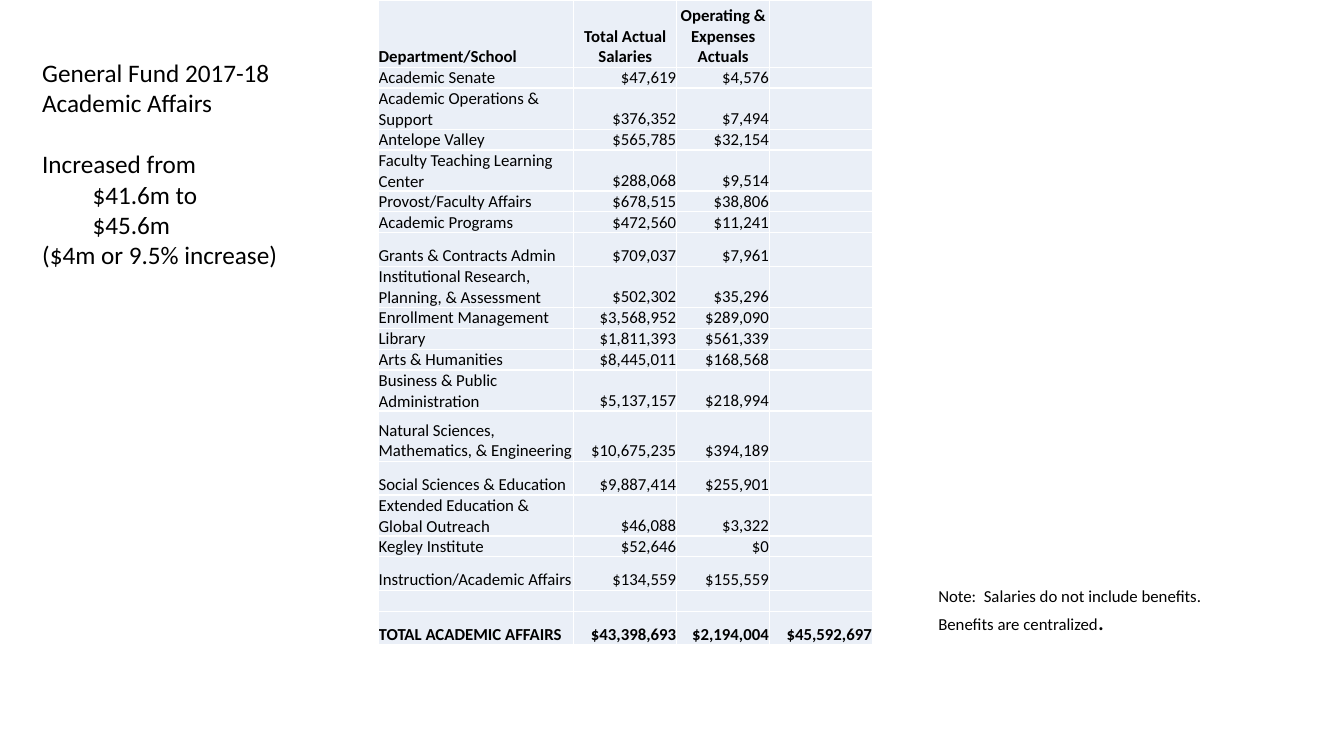
from lxml.etree import SubElement
from pptx import Presentation
from pptx.dml.color import RGBColor
from pptx.enum.text import MSO_ANCHOR, MSO_AUTO_SIZE, PP_ALIGN
from pptx.oxml.ns import qn
from pptx.util import Pt

COLORS = {"ink": "000000", "cell": "EAEFF7", "border": "FFFFFF"}
FONT = "Calibri"


def style_font(font, size, bold=False):
    font.name = FONT
    font.size = Pt(size)
    font.bold = bold
    font.color.rgb = RGBColor.from_string(COLORS["ink"])


def add_border(cell_properties, side):
    line = SubElement(cell_properties, qn(f"a:{side}"), w=str(Pt(1)))
    fill = SubElement(line, qn("a:solidFill"))
    SubElement(fill, qn("a:srgbClr"), val=COLORS["border"])


prs = Presentation()
prs.slide_width = Pt(960)
prs.slide_height = Pt(540)
slide = prs.slides.add_slide(prs.slide_layouts[6])

note = slide.shapes.add_textbox(Pt(663.12), Pt(414.72), Pt(296.64), Pt(43.92)).text_frame
note.word_wrap = True
note.auto_size = MSO_AUTO_SIZE.SHAPE_TO_FIT_TEXT
note.text = "Note:  Salaries do not include benefits.\nBenefits are centralized"
note.paragraphs[1].add_run().text = "."
for paragraph in note.paragraphs:
    for run in paragraph.runs:
        style_font(run.font, 18 if run.text == "." else 12)

summary = slide.shapes.add_textbox(Pt(23.04), Pt(37.44), Pt(184.32), Pt(159.84)).text_frame
summary.word_wrap = False
summary.auto_size = MSO_AUTO_SIZE.SHAPE_TO_FIT_TEXT
summary.text = "\n".join([
    "General Fund 2017-18",
    "Academic Affairs",
    "Increased from",
    "$41.6m to",
    "$45.6m",
    "($4m or 9.5% increase)",
])
for paragraph in summary.paragraphs:
    style_font(paragraph.runs[0].font, 18)
summary.paragraphs[2].space_before = Pt(22)
for amount in summary.paragraphs[3:5]:
    amount.level = 1
    amount._p.get_or_add_pPr().set("marL", str(Pt(36)))

budget_rows = [
    (4, "Department/School", "Total Actual Salaries", "Operating & Expenses Actuals", ""),
    (1, "Academic Senate", "$47,619", "$4,576", ""),
    (2, "Academic Operations & Support", "$376,352", "$7,494", ""),
    (1, "Antelope Valley", "$565,785", "$32,154", ""),
    (2, "Faculty Teaching Learning Center", "$288,068", "$9,514", ""),
    (1, "Provost/Faculty Affairs", "$678,515", "$38,806", ""),
    (1, "Academic Programs", "$472,560", "$11,241", ""),
    (2, "Grants & Contracts Admin", "$709,037", "$7,961", ""),
    (2, "Institutional Research, Planning, & Assessment", "$502,302", "$35,296", ""),
    (1, "Enrollment Management", "$3,568,952", "$289,090", ""),
    (1, "Library", "$1,811,393", "$561,339", ""),
    (1, "Arts & Humanities", "$8,445,011", "$168,568", ""),
    (2, "Business & Public Administration", "$5,137,157", "$218,994", ""),
    (3, "Natural Sciences, Mathematics, & Engineering", "$10,675,235", "$394,189", ""),
    (2, "Social Sciences & Education", "$9,887,414", "$255,901", ""),
    (2, "Extended Education & Global Outreach", "$46,088", "$3,322", ""),
    (1, "Kegley Institute", "$52,646", "$0", ""),
    (2, "Instruction/Academic Affairs", "$134,559", "$155,559", ""),
    (1, "", "", "", ""),
    (2, "TOTAL ACADEMIC AFFAIRS", "$43,398,693", "$2,194,004", "$45,592,697"),
]
column_widths = [139.9, 73.6, 66.2, 73.6]
budget_frame = slide.shapes.add_table(
    len(budget_rows), len(column_widths), Pt(270), Pt(0), Pt(sum(column_widths)), Pt(458.64)
)
budget = budget_frame.table
budget.first_row = False
budget.horz_banding = False
for column, width in zip(budget.columns, column_widths):
    column.width = Pt(width)

last_row = len(budget_rows) - 1
for r, (height_units, *values) in enumerate(budget_rows):
    budget.rows[r].height = Pt(12 * height_units)
    for c, value in enumerate(values):
        cell = budget.cell(r, c)
        cell.vertical_anchor = MSO_ANCHOR.BOTTOM
        cell.margin_left = cell.margin_right = cell.margin_top = Pt(0.5)
        cell.margin_bottom = Pt(0)
        for side in ("lnL", "lnR", "lnT", "lnB"):
            add_border(cell._tc.get_or_add_tcPr(), side)
        cell.fill.solid()
        cell.fill.fore_color.rgb = RGBColor.from_string(COLORS["cell"])
        paragraph = cell.text_frame.paragraphs[0]
        if not value:
            SubElement(paragraph._p, qn("a:endParaRPr"), sz="1200")
            continue
        paragraph.text = value
        if c > 0:
            paragraph.alignment = PP_ALIGN.CENTER if r == 0 else PP_ALIGN.RIGHT
        style_font(paragraph.runs[0].font, 12, r in (0, last_row))
budget_frame.height = Pt(458.64)

prs.save("out.pptx")
